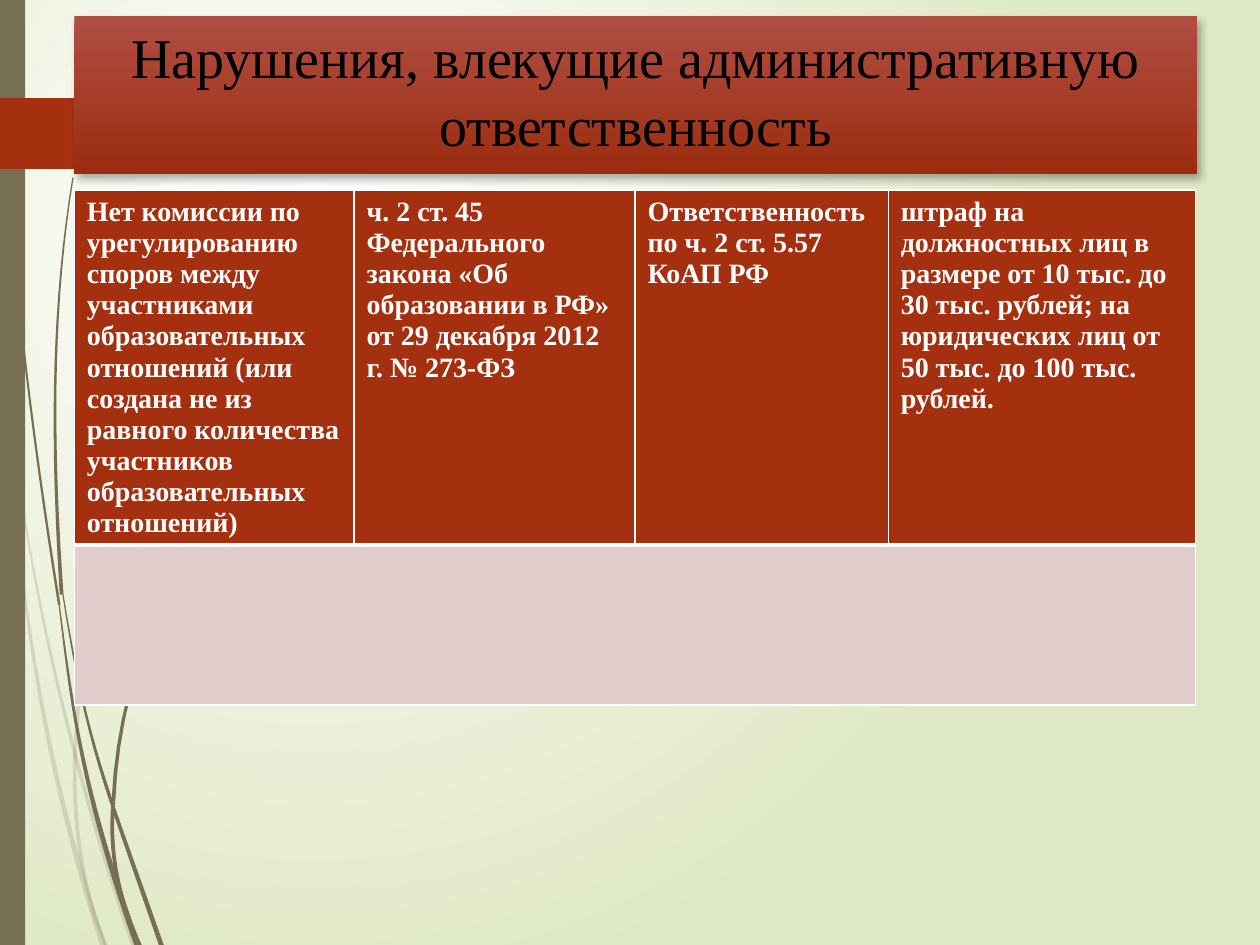
from lxml.etree import SubElement
from pptx import Presentation
from pptx.dml.color import RGBColor
from pptx.enum.shapes import MSO_SHAPE
from pptx.enum.text import MSO_ANCHOR, PP_ALIGN
from pptx.oxml.ns import qn
from pptx.util import Inches, Pt

OLIVE = RGBColor(0x76, 0x6F, 0x54)
RUST = RGBColor(0xA5, 0x30, 0x10)
BRICK = RGBColor(0xB1, 0x4E, 0x43)
DARK = RGBColor(0x9A, 0x2D, 0x0F)
ROSE = RGBColor(0xE1, 0xCD, 0xCC)
LIME = RGBColor(0xDF, 0xE8, 0xC4)
WHITE = RGBColor(0xFF, 0xFF, 0xFF)
BLACK = RGBColor(0, 0, 0)

FACE = "Times New Roman"
HEAD = {"name": FACE, "size": Pt(32), "bold": False}
CELL = {"name": FACE, "size": Pt(16), "bold": True}
WRAP = {"word_wrap": True, "vertical_anchor": MSO_ANCHOR.MIDDLE,
        "margin_bottom": Inches(0.13)}
PLACE = {"left": Inches(0.59), "top": Inches(0.13),
         "width": Inches(8.91), "height": Inches(1.25)}

TITLE = "Нарушения, влекущие административную ответственность"
TEXTS = [
    "Нет комиссии по урегулированию споров между участниками образовательных "
    "отношений (или создана не из равного количества участников "
    "образовательных отношений)",
    "ч. 2 ст. 45 Федерального закона «Об образовании в РФ» "
    "от 29 декабря 2012 г. № 273-ФЗ",
    "Ответственность по ч. 2 ст. 5.57 КоАП РФ",
    "штраф на должностных лиц в размере от 10 тыс. до 30 тыс. рублей; "
    "на юридических лиц от 50 тыс. до 100 тыс. рублей.",
]
COLS = [2.22, 2.23, 2.01, 2.44]
ROWS = [2.7, 1.27]

STEPS = 18
WIDTHS = {"tip": (0.01, 0.02), "stem": (0.01, 0.05), "blade": (0.01, 0.04),
          "hair": (0.01, 0.03), "bough": (0.01, 0.03), "root": (0.03, 0.03)}
PALE = {
    "tip": [(0, 2.9), (0.04, 3.1), (0.06, 3.3), (0.08, 3.5)],
    "stem": [(0.08, 3.5), (0.21, 4.83), (0.45, 6.17), (0.82, 7.5)],
    "blade": [(0.1, 3.45), (0.32, 4.8), (0.64, 6.15), (1.06, 7.5)],
    "bough": [(2.17, 1.53), (1.5, 2.6), (0.91, 4.05), (0.6, 5.9)],
    "root": [(0.6, 5.9), (0.6, 6.4), (0.67, 6.95), (0.84, 7.5)],
}
DEEP = {
    "tip": [(0.02, 0), (0.08, 1.6), (0.24, 3.2), (0.47, 4.8)],
    "stem": [(0.47, 4.8), (0.58, 5.6), (0.76, 6.45), (1.09, 7.5)],
    "blade": [(0.5, 4.72), (0.69, 5.7), (0.92, 6.47), (1.28, 7.5)],
    "hair": [(0.58, 1.41), (0.46, 2.5), (0.44, 3.6), (0.49, 4.72)],
    "bough": [(2.16, 3.44), (1.62, 4.16), (1.14, 5.13), (0.9, 6.36)],
    "root": [(0.9, 6.36), (0.9, 6.75), (0.97, 7.12), (1.11, 7.5)],
}


def style(obj, form):
    for key, val in form.items():
        setattr(obj, key, val)


def write(frame, text, form, color):
    run = frame.paragraphs[0].add_run()
    run.text = text
    style(run.font, form)
    run.font.color.rgb = color


def paint(shape, color):
    shape.shadow.inherit = False
    shape.fill.solid()
    shape.fill.fore_color.rgb = color
    shape.line.fill.background()


def blend(fill, first, last):
    fill.gradient()
    for stop, color, spot in zip(fill.gradient_stops, (first, last), (0, 1)):
        stop.color.rgb = color
        stop.position = spot


def fade(tone, part):
    SubElement(tone, qn("a:alpha"), val=str(part * 1000))


def add_back(slide):
    fill = slide.background.fill
    blend(fill, WHITE, LIME)
    line = next(slide.element.iter(qn("a:lin")))
    grad = line.getparent()
    grad.remove(line)
    ring = SubElement(grad, qn("a:path"), path="circle")
    SubElement(ring, qn("a:fillToRect"), l="50000", t="50000", r="100000", b="100000")


def curve(knots, t):
    u = 3 * t
    parts = (-(u - 1) * (u - 2) * (u - 3) / 6, u * (u - 2) * (u - 3) / 2,
             -u * (u - 1) * (u - 3) / 2, u * (u - 1) * (u - 2) / 6)
    return [sum(p * v for p, v in zip(parts, axis)) for axis in zip(*knots)]


def add_wisp(slide, knots, widths, part):
    first, last = widths
    left, right = [], []
    for step in range(STEPS + 1):
        t = step / STEPS
        x, y = curve(knots, t)
        half = (first + (last - first) * t) / 2
        left.append((Inches(x - half), Inches(y)))
        right.append((Inches(x + half), Inches(y)))
    rim = left + right[::-1]
    pen = slide.shapes.build_freeform(*rim[0], scale=1.0)
    pen.add_line_segments(rim[1:], close=True)
    wisp = pen.convert_to_shape()
    paint(wisp, OLIVE)
    fade(next(wisp.element.spPr.iter(qn("a:srgbClr"))), part)


def add_block(slide, kind, box, color):
    block = slide.shapes.add_shape(kind, *map(Inches, box))
    paint(block, color)


def add_title(slide):
    title = slide.shapes.title
    title.element.getparent().append(title.element)
    style(title, PLACE)
    blend(title.fill, BRICK, DARK)
    title.fill.gradient_angle = 270
    title.line.fill.background()
    glow = SubElement(title.element.spPr, qn("a:effectLst"))
    cast = SubElement(glow, qn("a:outerShdw"), blurRad=str(Pt(4.5)),
                      dist=str(Pt(2.6)), dir=str(53 * 60000), rotWithShape="0")
    fade(SubElement(cast, qn("a:srgbClr"), val=str(BLACK)), 30)
    style(title.text_frame, WRAP)
    write(title.text_frame, TITLE, HEAD, BLACK)
    title.text_frame.paragraphs[0].alignment = PP_ALIGN.CENTER


def edge(cell, base):
    props = cell._tc.get_or_add_tcPr()
    for side, size in {"L": 1, "R": 1, "T": 1, "B": base}.items():
        line = SubElement(props, qn("a:ln" + side), w=str(Pt(size)))
        fill = SubElement(line, qn("a:solidFill"))
        SubElement(fill, qn("a:srgbClr"), val=str(WHITE))


def add_grid(slide):
    box = map(Inches, (0.59, 1.51, sum(COLS), sum(ROWS)))
    grid = slide.shapes.add_table(len(ROWS), len(COLS), *box).table
    for col, wide in zip(grid.columns, COLS):
        col.width = Inches(wide)
    for row, high, color, base in zip(grid.rows, ROWS, (RUST, ROSE), (3, 1)):
        row.height = Inches(high)
        for cell in row.cells:
            edge(cell, base)
            cell.fill.solid()
            cell.fill.fore_color.rgb = color
    for cell, text in zip(grid.rows[0].cells, TEXTS):
        write(cell.text_frame, text, CELL, WHITE)
    grid.cell(1, 0).merge(grid.cell(1, len(COLS) - 1))


def main():
    deck = Presentation()
    style(deck, {"slide_width": Inches(10), "slide_height": Inches(7.5)})
    slide = deck.slides.add_slide(deck.slide_layouts[5])
    add_back(slide)
    for group, part in ((PALE, 20), (DEEP, 100)):
        for name, knots in group.items():
            add_wisp(slide, knots, WIDTHS[name], part)
    add_block(slide, MSO_SHAPE.RECTANGLE, (0, 0, 0.2, 7.5), OLIVE)
    add_block(slide, MSO_SHAPE.PENTAGON, (0, 0.78, 1.49, 0.56), RUST)
    add_title(slide)
    add_grid(slide)
    deck.save("out.pptx")


if __name__ == "__main__":
    main()
